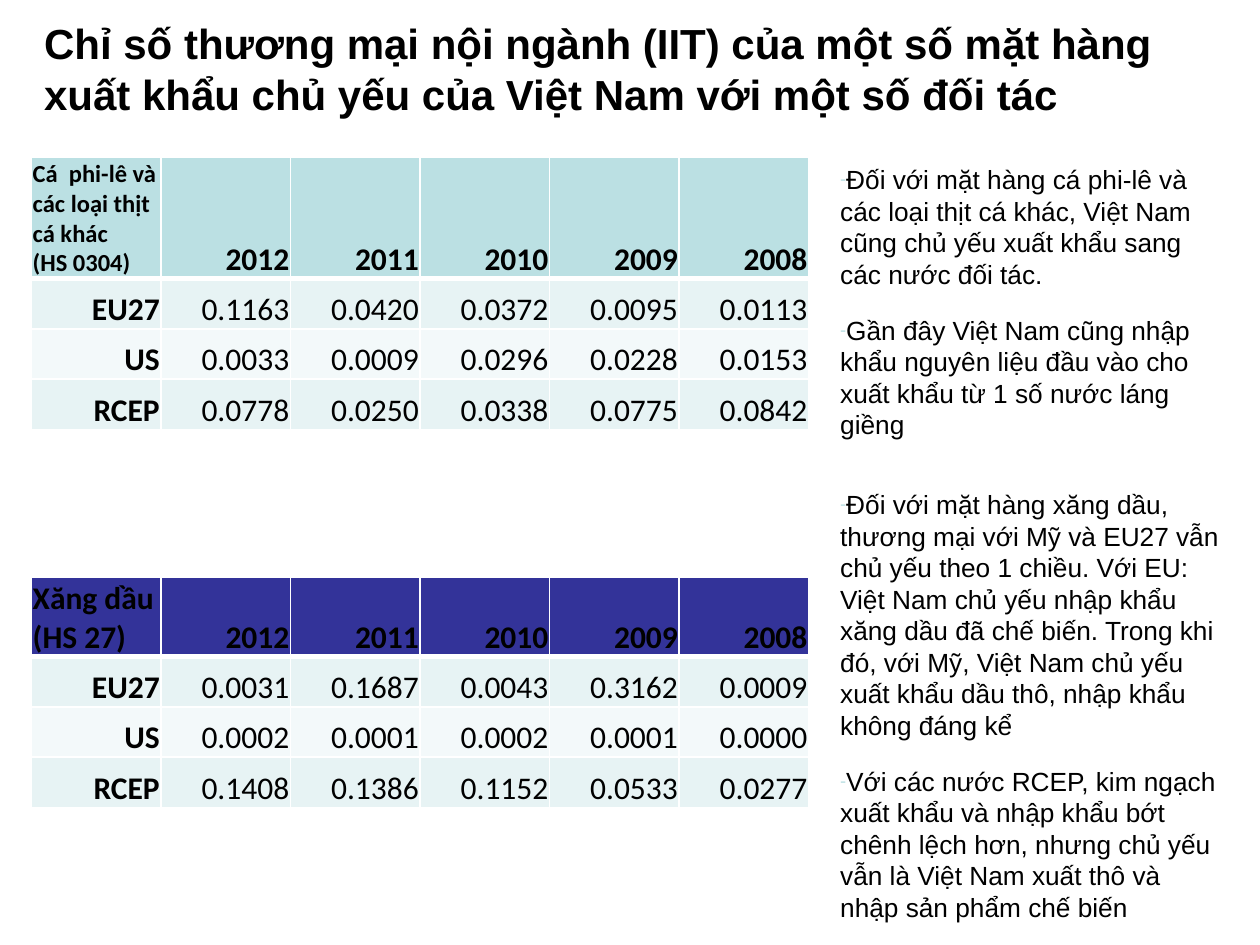
from pptx import Presentation
from pptx.dml.color import RGBColor
from pptx.enum.text import MSO_ANCHOR, PP_ALIGN
from pptx.oxml.ns import qn
from pptx.util import Inches, Pt
from lxml.etree import SubElement

COLORS = {
    "text": "000000",
    "border": "FFFFFF",
    "fish": "BBE0E3",
    "petrol": "333399",
    "odd": "E7F3F4",
    "even": "F3F9FA",
    "bullet": "BBE0E3",
}
YEARS = ["2012", "2011", "2010", "2009", "2008"]
FISH_ROWS = [
    ["EU27", "0.1163", "0.0420", "0.0372", "0.0095", "0.0113"],
    ["US", "0.0033", "0.0009", "0.0296", "0.0228", "0.0153"],
    ["RCEP", "0.0778", "0.0250", "0.0338", "0.0775", "0.0842"],
]
PETROL_ROWS = [
    ["EU27", "0.0031", "0.1687", "0.0043", "0.3162", "0.0009"],
    ["US", "0.0002", "0.0001", "0.0002", "0.0001", "0.0000"],
    ["RCEP", "0.1408", "0.1386", "0.1152", "0.0533", "0.0277"],
]
FISH_NOTES = [
    "Đối với mặt hàng cá phi-lê và các loại thịt cá khác, Việt Nam cũng chủ yếu "
    "xuất khẩu sang các nước đối tác.",
    "Gần đây Việt Nam cũng nhập khẩu nguyên liệu đầu vào cho xuất khẩu từ 1 số "
    "nước láng giềng",
]
PETROL_NOTES = [
    "Đối với mặt hàng xăng dầu, thương mại với Mỹ và EU27 vẫn chủ yếu theo 1 chiều. "
    "Với EU: Việt Nam chủ yếu nhập khẩu xăng dầu đã chế biến. Trong khi đó, với Mỹ, "
    "Việt Nam chủ yếu xuất khẩu dầu thô, nhập khẩu không đáng kể",
    "Với các nước RCEP, kim ngạch xuất khẩu và nhập khẩu bớt chênh lệch hơn, nhưng "
    "chủ yếu vẫn là Việt Nam xuất thô và nhập sản phẩm chế biến",
]


def rgb(name):
    return RGBColor.from_string(COLORS[name])


def format_runs(para, font, size, bold=False):
    for span in para.runs:
        span.font.name = font
        span.font.size = Pt(size)
        span.font.bold = bold
        span.font.color.rgb = rgb("text")


def add_title(page, box, text):
    title = page.shapes.title
    title.left, title.top, title.width, title.height = map(Inches, box)
    frame = title.text_frame
    frame.text = text
    frame.word_wrap = True
    frame.vertical_anchor = MSO_ANCHOR.BOTTOM
    para = frame.paragraphs[0]
    para.alignment = PP_ALIGN.LEFT
    format_runs(para, "Arial", 24, True)


def set_borders(cell, bottom):
    props = cell._tc.get_or_add_tcPr()
    for side, points in (("L", 1), ("R", 1), ("T", 1), ("B", bottom)):
        line = SubElement(props, qn(f"a:ln{side}"), w=str(Pt(points)))
        fill = SubElement(line, qn("a:solidFill"))
        SubElement(fill, qn("a:srgbClr"), val=COLORS["border"])


def format_cell(cell, text, fill, size, bold, align, bottom):
    set_borders(cell, bottom)
    cell.fill.solid()
    cell.fill.fore_color.rgb = rgb(fill)
    cell.margin_left = cell.margin_right = cell.margin_top = Inches(0.01)
    cell.margin_bottom = 0
    cell.vertical_anchor = MSO_ANCHOR.BOTTOM
    cell.text_frame.text = text
    for para in cell.text_frame.paragraphs:
        para.alignment = align
        format_runs(para, "Calibri", size, bold)


def add_index_table(page, box, product, product_size, header_fill, rows):
    left, top, width, height = box
    row_height = 0.4
    records = [[product] + YEARS] + rows
    frame = page.shapes.add_table(len(records), len(records[0]), *map(Inches, box))
    table = frame.table
    for column in table.columns:
        column.width = Inches(width / len(records[0]))
    for row in table.rows:
        row.height = Inches(row_height)
    table.rows[0].height = Inches(height - row_height * len(rows))
    for r, record in enumerate(records):
        header = r == 0
        fill = header_fill if header else ("odd" if r % 2 else "even")
        for c, text in enumerate(record):
            corner = header and c == 0
            format_cell(
                table.cell(r, c), text, fill,
                size=product_size if corner else 18,
                bold=header or c == 0,
                align=PP_ALIGN.LEFT if corner else PP_ALIGN.RIGHT,
                bottom=3 if header else 1,
            )


def add_bullet(para):
    props = para._p.get_or_add_pPr()
    props.set("marL", "0")
    props.set("indent", "0")
    color = SubElement(props, qn("a:buClr"))
    SubElement(color, qn("a:srgbClr"), val=COLORS["bullet"])
    SubElement(props, qn("a:buSzPct"), val="70000")
    SubElement(props, qn("a:buFont"), typeface="Arial")
    SubElement(props, qn("a:buChar"), char="-")


def add_notes(page, box, notes):
    frame = page.shapes.add_textbox(*map(Inches, box)).text_frame
    frame.word_wrap = True
    frame.text = "\n".join(notes)
    for para in frame.paragraphs:
        para.space_before = Pt(4)
        para.space_after = Pt(10)
        add_bullet(para)
        format_runs(para, "Arial", 15)


def main():
    deck = Presentation()
    deck.slide_width, deck.slide_height = Inches(10), Inches(7.5)
    page = deck.slides.add_slide(deck.slide_layouts[5])
    add_title(
        page, (0.25, 0.37, 9.47, 0.62),
        "Chỉ số thương mại nội ngành (IIT) của một số mặt hàng xuất khẩu chủ yếu "
        "của Việt Nam với một số đối tác",
    )
    add_index_table(
        page, (0.25, 1.25, 6.17, 2.16),
        "Cá  phi-lê và các loại thịt cá khác\n(HS 0304)", 14, "fish", FISH_ROWS,
    )
    add_index_table(
        page, (0.25, 4.58, 6.17, 1.83),
        "Xăng dầu (HS 27)", 18, "petrol", PETROL_ROWS,
    )
    add_notes(page, (6.57, 1.25, 3.26, 2.19), FISH_NOTES)
    add_notes(page, (6.57, 3.83, 3.26, 3.46), PETROL_NOTES)
    deck.save("out.pptx")


if __name__ == "__main__":
    main()
